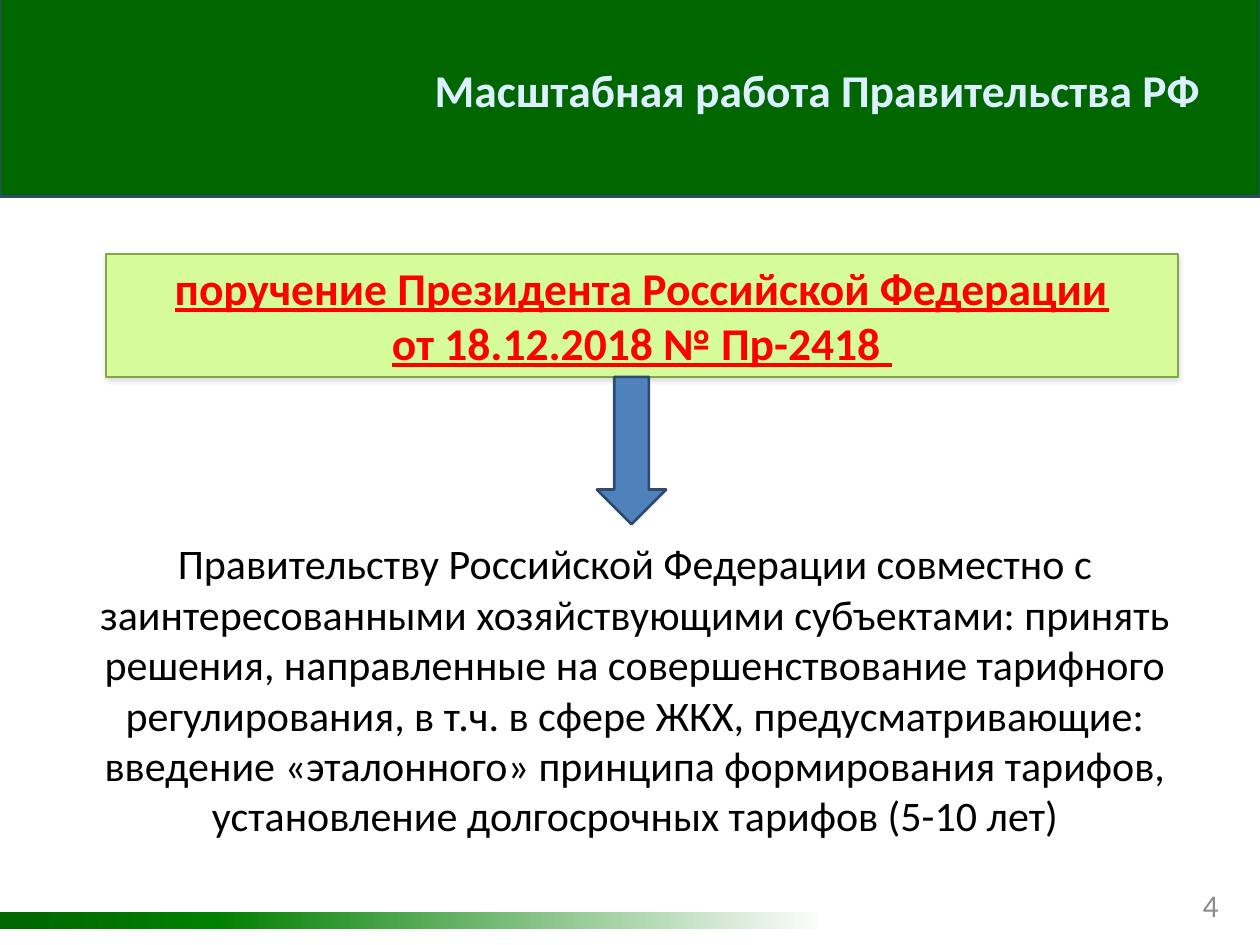
from lxml import etree
from pptx import Presentation
from pptx.dml.color import RGBColor
from pptx.enum.shapes import MSO_SHAPE
from pptx.enum.text import MSO_ANCHOR, MSO_AUTO_SIZE, PP_ALIGN
from pptx.oxml.ns import qn
from pptx.util import Pt

RECTANGLE, DOWN_ARROW = MSO_SHAPE.RECTANGLE, MSO_SHAPE.DOWN_ARROW
TOP, MIDDLE = MSO_ANCHOR.TOP, MSO_ANCHOR.MIDDLE
LEFT, CENTER, RIGHT = PP_ALIGN.LEFT, PP_ALIGN.CENTER, PP_ALIGN.RIGHT
NO_AUTOFIT = MSO_AUTO_SIZE.NONE

FONT = "Calibri"
COLORS = {
    "band": "006600",
    "green": "008000",
    "white": "FFFFFF",
    "outline": "2E4B6F",
    "callout": "D5FB9B",
    "callout_line": "86A44A",
    "arrow": "4F81BD",
    "title": "DDF0FF",
    "order": "FF0000",
    "body": "000000",
    "number": "8C8C8C",
}
ORDER_LINES = [
    "поручение Президента Российской Федерации",
    "от 18.12.2018 № Пр-2418 ",
]
TASK = (
    "Правительству Российской Федерации совместно с заинтересованными "
    "хозяйствующими субъектами: принять решения, направленные на "
    "совершенствование тарифного регулирования, в т.ч. в сфере ЖКХ, "
    "предусматривающие: введение «эталонного» принципа формирования тарифов, "
    "установление долгосрочных тарифов (5-10 лет)"
)


def color(name):
    return RGBColor.from_string(COLORS[name])


def place(shape, left, top, width, height):
    shape.left, shape.top = Pt(left), Pt(top)
    shape.width, shape.height = Pt(width), Pt(height)


def add_block(page, kind, bounds, fill=None, line=None, weight=1.5):
    block = page.shapes.add_shape(kind, *map(Pt, bounds))
    block.shadow.inherit = False
    if fill:
        block.fill.solid()
        block.fill.fore_color.rgb = color(fill)
    if line:
        block.line.color.rgb = color(line)
        block.line.width = Pt(weight)
    else:
        block.line.fill.background()
    return block


def set_gradient(shape, stops):
    shape.fill.gradient()
    shape.fill.gradient_angle = 0
    stop_list = shape.element.spPr.find(".//" + qn("a:gsLst"))
    for old_stop in list(stop_list):
        stop_list.remove(old_stop)
    for percent, name in stops:
        stop = etree.SubElement(stop_list, qn("a:gs"), pos=str(percent * 1000))
        etree.SubElement(stop, qn("a:srgbClr"), val=COLORS[name])


def add_soft_shadow(shape):
    effects = shape.element.spPr.find(qn("a:effectLst"))
    shadow = etree.SubElement(
        effects, qn("a:outerShdw"), blurRad=str(Pt(3)), dist=str(Pt(1)),
        dir="5400000", rotWithShape="0")
    black = etree.SubElement(shadow, qn("a:srgbClr"), val="000000")
    etree.SubElement(black, qn("a:alpha"), val="15000")


def write(shape, lines, size, ink, align, anchor=TOP, wrap=True,
          bold=False, underline=False):
    frame = shape.text_frame
    frame.word_wrap = wrap
    frame.auto_size = NO_AUTOFIT
    frame.vertical_anchor = anchor
    for index, line in enumerate(lines):
        para = frame.add_paragraph() if index else frame.paragraphs[0]
        para.alignment = align
        span = para.add_run()
        span.text = line
        span.font.name = FONT
        span.font.size = Pt(size)
        span.font.bold = bold
        span.font.underline = underline
        span.font.color.rgb = color(ink)


def add_text(page, bounds, lines, size, ink, align, anchor=TOP):
    box = page.shapes.add_textbox(*map(Pt, bounds))
    write(box, lines, size, ink, align, anchor)


def add_title(page, bounds, text):
    title = page.shapes.title
    place(title, *bounds)
    write(title, [text], 26, "title", LEFT, wrap=False, bold=True)
    # Bring the title in front of the header band
    title.element.getparent().append(title.element)


def main():
    deck = Presentation()
    deck.slide_width, deck.slide_height = Pt(720), Pt(540)
    page = deck.slides.add_slide(deck.slide_layouts[5])

    # Header band and title
    add_block(page, RECTANGLE, (0, -2.2, 720, 114.5), "band", "outline")
    add_title(page, (241.2, 31.7, 456.5, 38.9),
              "Масштабная работа Правительства РФ")

    # Footer strip and page number
    strip = add_block(page, RECTANGLE, (0, 521.3, 473, 9.4))
    set_gradient(strip, [(0, "band"), (26, "green"), (100, "white")])
    add_text(page, (660.2, 502.6, 43.2, 28.8), ["4"], 18, "number",
             RIGHT, MIDDLE)

    # The order and the arrow to the task
    callout = add_block(page, RECTANGLE, (60.5, 145.1, 612.5, 70.4),
                        "callout", "callout_line", 1)
    add_soft_shadow(callout)
    write(callout, ORDER_LINES, 26, "order", CENTER, bold=True, underline=True)
    add_block(page, DOWN_ARROW, (341.1, 215.4, 39.6, 84.2), "arrow", "outline")

    # The task
    add_text(page, (36.7, 303.8, 652.3, 181.4), [TASK], 24, "body", CENTER)

    deck.save("out.pptx")


if __name__ == "__main__":
    main()
